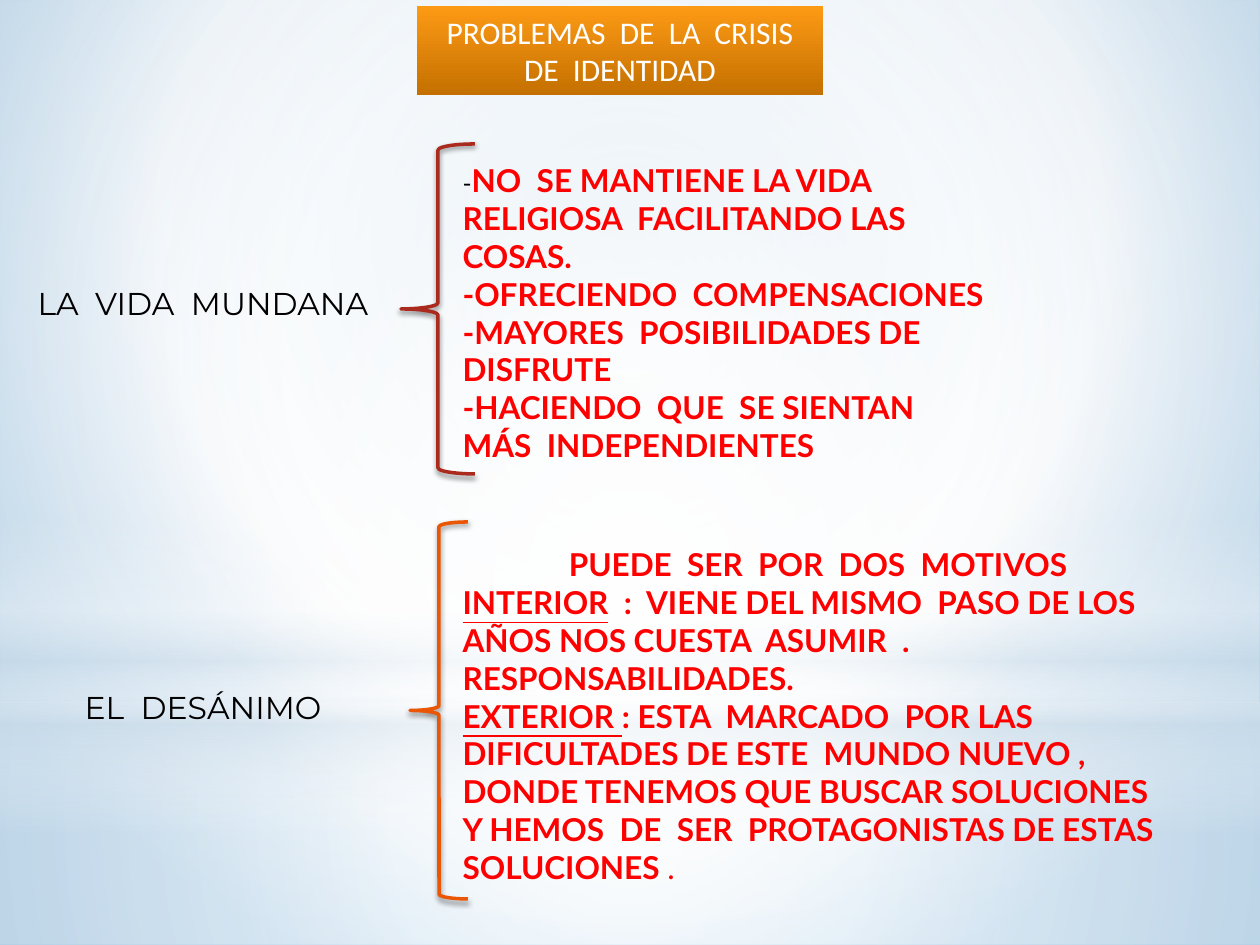
from lxml.etree import SubElement
from pptx import Presentation
from pptx.dml.color import RGBColor
from pptx.enum.shapes import MSO_SHAPE
from pptx.enum.text import MSO_ANCHOR, MSO_AUTO_SIZE, PP_ALIGN
from pptx.oxml.ns import qn
from pptx.util import Pt

PX = 914400 / 126
HEX = {
    "white": "FFFFFF", "black": "000000", "red": "FF0000", "mist": "CCDDEA",
    "pale": "BCD5E8", "sky": "82B6DE", "gold": "FD9A15", "ochre": "C47000",
    "brick": "AA2B1E", "orange": "EB5605",
}
LEFT, MID = PP_ALIGN.LEFT, PP_ALIGN.CENTER

# Text formats
HEAD = {"name": "Calibri", "size": 18, "bold": False, "color": "white"}
LABEL = {"name": "Montserrat", "size": 18, "bold": False, "color": "black"}
BODY = {"name": "Lato", "size": 18, "bold": True, "color": "red"}
DASH = {**BODY, "size": 14, "bold": False, "color": "black"}
UNDER = {**BODY, "underline": True}
THIN = {**BODY, "bold": False}

# Content: paragraphs are (alignment, [(text, format), ...])
TITLE = [(MID, [("PROBLEMAS  DE  LA  CRISIS DE  IDENTIDAD", HEAD)])]
TOPICS = [
    {
        "label": "LA  VIDA  MUNDANA", "spot": (25, 278, 392, 50),
        "brace": (401, 144, 74, 330), "line": "brick",
        "box": (450, 155, 557, 318),
        "text": [
            (LEFT, [("-", DASH), ("NO  SE MANTIENE LA VIDA RELIGIOSA  FACILITANDO LAS COSAS.", BODY)]),
            (LEFT, [("-OFRECIENDO  COMPENSACIONES", BODY)]),
            (LEFT, [("-MAYORES  POSIBILIDADES DE DISFRUTE", BODY)]),
            (LEFT, [("-HACIENDO  QUE  SE SIENTAN  MÁS  INDEPENDIENTES", BODY)]),
        ],
    },
    {
        "label": "EL  DESÁNIMO", "spot": (72, 682, 297, 50),
        "brace": (410, 522, 58, 377), "line": "orange",
        "box": (450, 539, 736, 386),
        "text": [
            (MID, [("PUEDE  SER  POR  DOS  MOTIVOS", BODY)]),
            (LEFT, [("INTERIOR", UNDER),
                    ("  :  VIENE DEL MISMO  PASO DE LOS AÑOS NOS CUESTA  ASUMIR  . RESPONSABILIDADES.", BODY)]),
            (LEFT, [("EXTERIOR ", UNDER),
                    (": ESTA  MARCADO  POR LAS DIFICULTADES DE ESTE  MUNDO NUEVO , "
                     "DONDE TENEMOS QUE BUSCAR SOLUCIONES  Y HEMOS  DE  SER  "
                     "PROTAGONISTAS DE ESTAS  SOLUCIONES ", BODY),
                    (".", THIN)]),
        ],
    },
]

# Backdrop: stops are (position, colour, opacity); no focus means top to bottom
CORE = (50, 50, 50, 50)
SKY = [(0, "pale", 100), (60, "white", 100), (100, "sky", 100)]
LAYERS = [
    (MSO_SHAPE.RECTANGLE, (0, 703, 1260, 242), CORE,
     [(0, "white", 91), (37, "white", 76), (100, "mist", 79)]),
    (MSO_SHAPE.RECTANGLE, (0, 0, 1260, 703), CORE,
     [(0, "white", 89), (48, "white", 62), (100, "mist", 79)]),
    (MSO_SHAPE.RECTANGLE, (0, 519, 1260, 315), None,
     [(0, "white", 0), (29, "white", 30), (45, "mist", 40),
      (55, "white", 26), (65, "mist", 60), (100, "white", 0)]),
    (MSO_SHAPE.OVAL, (0, 221, 1260, 703), CORE,
     [(0, "white", 100), (56, "white", 0)]),
]


def emu(*nums):
    return [round(n * PX) for n in nums]


def tint(root, name, alpha):
    clr = SubElement(root, qn("a:srgbClr"), val=HEX[name])
    if alpha < 100:
        SubElement(clr, qn("a:alpha"), val=str(alpha * 1000))


def blend(fill, root, stops, focus=None):
    fill.gradient()
    grad = root.find(".//" + qn("a:gradFill"))
    grad.clear()
    grad.set("rotWithShape", "1")
    group = SubElement(grad, qn("a:gsLst"))
    for pos, name, alpha in stops:
        tint(SubElement(group, qn("a:gs"), pos=str(pos * 1000)), name, alpha)
    if focus:
        way = SubElement(grad, qn("a:path"), path="circle")
        SubElement(way, qn("a:fillToRect"),
                   {side: str(n * 1000) for side, n in zip("ltrb", focus)})
    else:
        SubElement(grad, qn("a:lin"), ang="5400000", scaled="0")


def place(shape, box):
    for key, val in zip(("left", "top", "width", "height"), emu(*box)):
        setattr(shape, key, val)


def write(shape, box, paras, anchor=MSO_ANCHOR.TOP):
    place(shape, box)
    tree.append(shape.element)  # bring in front of the backdrop
    frame = shape.text_frame
    look = {"word_wrap": True, "auto_size": MSO_AUTO_SIZE.NONE, "vertical_anchor": anchor}
    for key, val in look.items():
        setattr(frame, key, val)
    for i, (align, runs) in enumerate(paras):
        para = frame.add_paragraph() if i else frame.paragraphs[0]
        gaps = {"alignment": align, "space_before": Pt(0), "space_after": Pt(0), "line_spacing": 1.0}
        for key, val in gaps.items():
            setattr(para, key, val)
        props = para._p.get_or_add_pPr()
        props.set("marL", "0")
        props.set("indent", "0")
        SubElement(props, qn("a:buNone"))
        for text, form in runs:
            run = para.add_run()
            run.text = text
            for key, val in form.items():
                if key == "color":
                    run.font.color.rgb = RGBColor.from_string(HEX[val])
                else:
                    setattr(run.font, key, Pt(val) if key == "size" else val)


def draw(kind, box):
    shape = slide.shapes.add_shape(kind, *emu(*box))
    shape.shadow.inherit = False
    return shape


def brace(box, name):
    shape = draw(MSO_SHAPE.LEFT_BRACE, box)
    shape.fill.background()
    shape.line.color.rgb = RGBColor.from_string(HEX[name])
    shape.line.width = Pt(2)
    glow = shape.element.find(".//" + qn("a:effectLst"))
    drop = SubElement(glow, qn("a:outerShdw"), blurRad=str(Pt(3.1)), dist=str(Pt(1.8)),
                      dir="5400000", rotWithShape="0")
    tint(drop, "black", 45)


prs = Presentation()
prs.slide_width, prs.slide_height = emu(1260, 945)
slide = prs.slides.add_slide(prs.slide_layouts[4])  # title, two labels, two lists
tree = slide.shapes.element
title, *slots = slide.placeholders

# Backdrop
blend(slide.background.fill, slide.element, SKY, (20, 10, 20, 60))
for kind, box, focus, stops in LAYERS:
    layer = draw(kind, box)
    layer.line.fill.background()
    blend(layer.fill, layer.element, stops, focus)

# Title
blend(title.fill, title.element, [(0, "gold", 100), (100, "ochre", 100)])
write(title, (417, 6, 406, 89), TITLE, MSO_ANCHOR.MIDDLE)

# Topics: label, brace, list
for topic, label, body in zip(TOPICS, slots[::2], slots[1::2]):
    write(label, topic["spot"], [(LEFT, [(topic["label"], LABEL)])])
    brace(topic["brace"], topic["line"])
    write(body, topic["box"], topic["text"])

prs.save("out.pptx")
